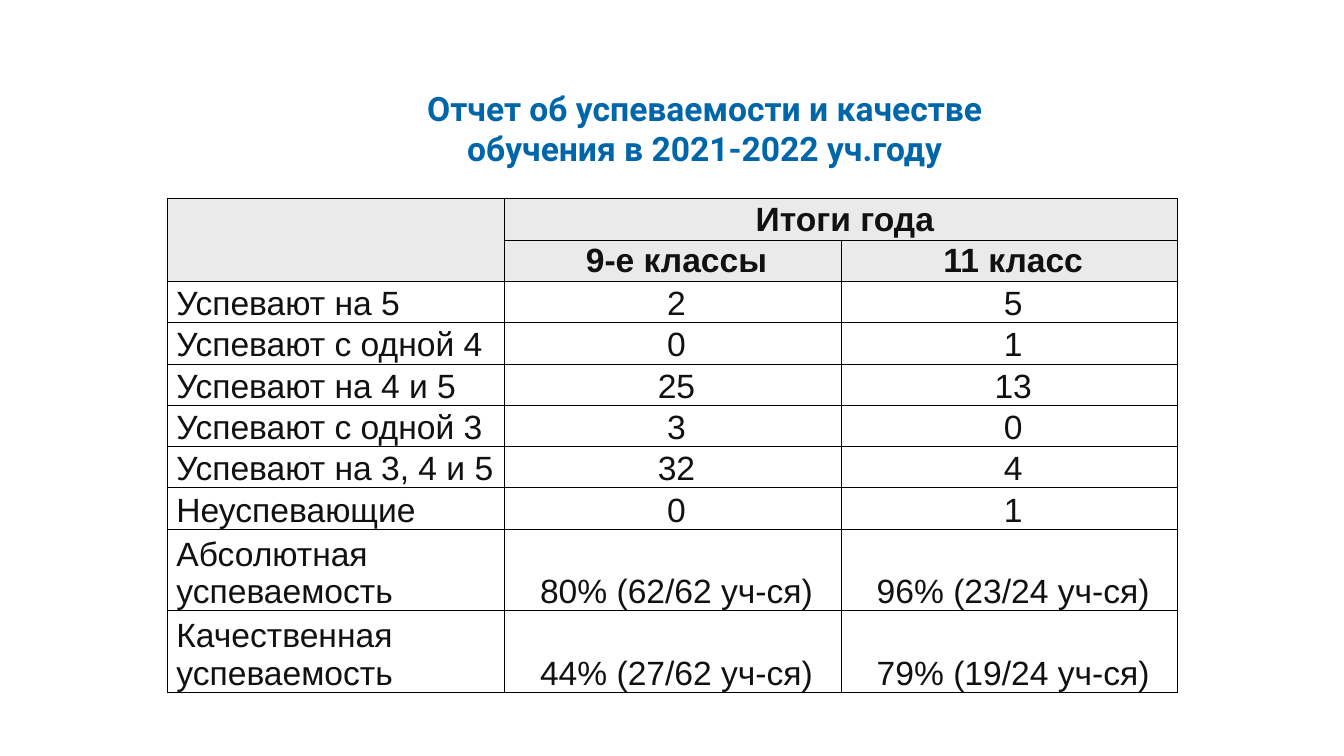
from lxml import etree
from pptx import Presentation
from pptx.dml.color import RGBColor
from pptx.enum import text
from pptx.oxml import ns
from pptx.util import Inches, Pt

TITLE = "Отчет об успеваемости и качестве обучения в 2021-2022 уч.году"
HEAD = [
    ("", "Итоги года", ""),
    ("", "9-е классы", "11 класс"),
]
BODY = [
    ("Успевают на 5", "2", "5"),
    ("Успевают с одной 4", "0", "1"),
    ("Успевают на 4 и 5", "25", "13"),
    ("Успевают с одной 3", "3", "0"),
    ("Успевают на 3, 4 и 5", "32", "4"),
    ("Неуспевающие", "0", "1"),
    ("Абсолютная успеваемость", "80% (62/62 уч-ся)", "96% (23/24 уч-ся)"),
    ("Качественная успеваемость", "44% (27/62 уч-ся)", "79% (19/24 уч-ся)"),
]
ROWS = HEAD + BODY
COL, ROW, TALL = 3.34, 0.41, 0.81
HIGH = [ROW] * (len(ROWS) - 2) + [TALL] * 2
ANCHOR, ALIGN = text.MSO_ANCHOR, text.PP_ALIGN


def color(code):
    return RGBColor.from_string(code)


def write(para, words, face, tint, bold):
    run = para.add_run()
    run.text = words
    run.font.name, run.font.size, run.font.bold = face, Pt(24), bold
    run.font.color.rgb = color(tint)


def border(cell):
    props = cell._tc.get_or_add_tcPr()
    for side in ("lnL", "lnR", "lnT", "lnB"):
        line = etree.SubElement(props, ns.qn("a:" + side), w=str(Pt(0.5)))
        fill = etree.SubElement(line, ns.qn("a:solidFill"))
        etree.SubElement(fill, ns.qn("a:srgbClr"), val="000000")


deck = Presentation()
deck.slide_width, deck.slide_height = Inches(13.33), Inches(7.5)
slide = deck.slides.add_slide(deck.slide_layouts[5])

# Title
title = slide.shapes.title
title.left, title.top = Inches(3.66), Inches(0.82)
title.width, title.height = Inches(6.66), Inches(0.91)
frame = title.text_frame
frame.word_wrap, frame.vertical_anchor = True, ANCHOR.TOP
frame.paragraphs[0].alignment = ALIGN.CENTER
write(frame.paragraphs[0], TITLE, "Roboto", "0066AA", True)

# Results table
table = slide.shapes.add_table(
    len(ROWS), 3, Inches(1.66), Inches(1.97),
    Inches(3 * COL), Inches(sum(HIGH))).table
table.first_row = table.horz_banding = False
for col in table.columns:
    col.width = Inches(COL)
for r, (row, high) in enumerate(zip(ROWS, HIGH)):
    table.rows[r].height = Inches(high)
    head = r < len(HEAD)
    for c, words in enumerate(row):
        cell = table.cell(r, c)
        border(cell)
        cell.fill.solid()
        cell.fill.fore_color.rgb = color("EAEAEA" if head else "FFFFFF")
        cell.margin_left, cell.margin_bottom = Inches(0.09), 0
        cell.margin_right = cell.margin_top = Inches(0.01)
        cell.vertical_anchor = ANCHOR.MIDDLE if head else ANCHOR.BOTTOM
        para = cell.text_frame.paragraphs[0]
        para.alignment = ALIGN.CENTER if c else ALIGN.LEFT
        if words:
            write(para, words, "Arial", "111111", head)

# Merged headings
table.cell(0, 0).merge(table.cell(1, 0))
table.cell(0, 1).merge(table.cell(0, 2))

deck.save("out.pptx")
